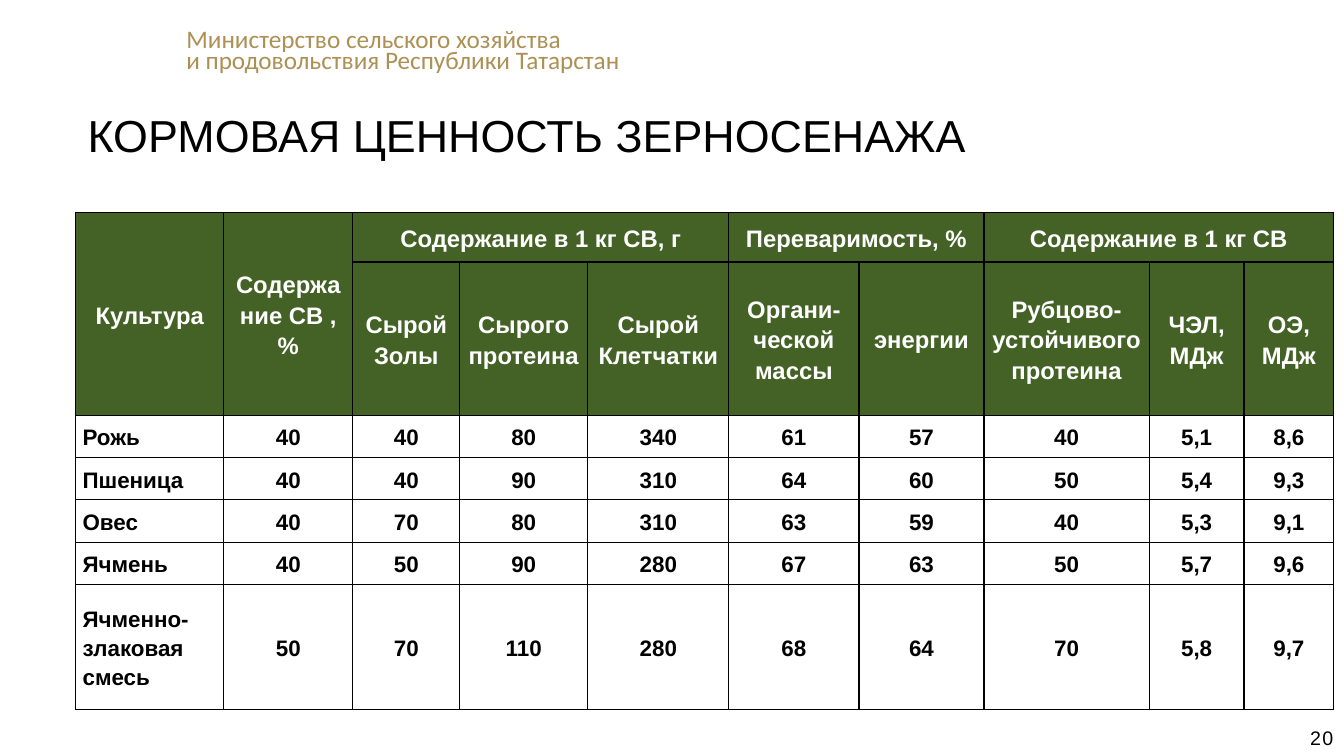
import dataclasses

import pptx
import pptx.dml.color
import pptx.enum.text
import pptx.oxml
import pptx.oxml.ns
import pptx.util

EMU_PER_PX = 9144
ALIGN = pptx.enum.text.PP_ALIGN
AUTO_SIZE = pptx.enum.text.MSO_AUTO_SIZE


@dataclasses.dataclass(frozen=True)
class Theme:
    gold: str = "AC9054"
    green: str = "446226"
    white: str = "FFFFFF"
    black: str = "000000"
    heading_font: str = "Calibri"
    font: str = "Arial"
    ministry_size: int = 18
    title_size: int = 32
    header_size: int = 17
    body_size: int = 16
    number_size: int = 14
    border_pt: int = 1


THEME = Theme()

COLUMN_WIDTHS = [147, 128, 106, 127, 140, 129, 124, 164, 94, 89]
ROW_HEIGHTS = [49, 152, 42, 42, 42, 42, 124]
# row, column, rows spanned, columns spanned, text
GROUP_HEADERS = [
    (0, 0, 2, 1, "Культура"),
    (0, 1, 2, 1, "Содержание СВ , %"),
    (0, 2, 1, 3, "Содержание в 1 кг СВ, г"),
    (0, 5, 1, 2, "Переваримость, %"),
    (0, 7, 1, 3, "Содержание в 1 кг СВ"),
]
SUBHEADERS = [
    "Сырой Золы", "Сырого протеина", "Сырой Клетчатки", "Органи-ческой массы",
    "энергии", "Рубцово- устойчивого протеина", "ЧЭЛ, МДж", "ОЭ, МДж",
]
CROPS = [
    ("Рожь", "40", "40", "80", "340", "61", "57", "40", "5,1", "8,6"),
    ("Пшеница", "40", "40", "90", "310", "64", "60", "50", "5,4", "9,3"),
    ("Овес", "40", "70", "80", "310", "63", "59", "40", "5,3", "9,1"),
    ("Ячмень", "40", "50", "90", "280", "67", "63", "50", "5,7", "9,6"),
    ("Ячменно-злаковая смесь", "50", "70", "110", "280", "68", "64", "70", "5,8", "9,7"),
]


def px(length):
    return pptx.util.Emu(length * EMU_PER_PX)


def rgb(color):
    return pptx.dml.color.RGBColor.from_string(color)


def add_span(para, text, size, color, font=THEME.font, bold=False):
    span = para.add_run()
    span.text = text
    span.font.name = font
    span.font.size = pptx.util.Pt(size)
    span.font.bold = bold
    span.font.color.rgb = rgb(color)
    return span


def add_box(page, left, top, width, height, wrap, grow=True):
    """Add an empty text box and return its text frame."""
    box = page.shapes.add_textbox(px(left), px(top), px(width), px(height))
    frame = box.text_frame
    frame.word_wrap = wrap
    frame.auto_size = AUTO_SIZE.SHAPE_TO_FIT_TEXT if grow else AUTO_SIZE.NONE
    return frame


def add_ministry(page):
    frame = add_box(page, 175, 26, 455, 54, wrap=False)
    lines = ["Министерство сельского хозяйства", "и продовольствия Республики Татарстан"]
    for index, line in enumerate(lines):
        para = frame.add_paragraph() if index else frame.paragraphs[0]
        para.line_spacing = 0.7
        add_span(para, line, THEME.ministry_size, THEME.gold, THEME.heading_font)


def add_title(page):
    para = add_box(page, 58, 102, 1275, 64, wrap=True).paragraphs[0]
    properties = para._p.get_or_add_pPr()
    properties.set("marL", str(px(19)))
    properties.set("indent", "0")
    add_span(para, "КОРМОВАЯ ЦЕННОСТЬ ЗЕРНОСЕНАЖА", THEME.title_size, THEME.black)


def add_page_number(page):
    frame = add_box(page, 1298, 720, 26, 23, wrap=False, grow=False)
    frame.margin_left = frame.margin_right = frame.margin_top = frame.margin_bottom = 0
    para = frame.paragraphs[0]
    para.alignment = ALIGN.CENTER
    span = add_span(para, "20", THEME.number_size, THEME.black)
    span._r.get_or_add_rPr().set("spc", "100")


def outline_cell(cell):
    properties = cell._tc.get_or_add_tcPr()
    width = pptx.util.Pt(THEME.border_pt)
    for side in ("lnL", "lnR", "lnT", "lnB"):
        properties.append(pptx.oxml.parse_xml(
            f'<a:{side} {pptx.oxml.ns.nsdecls("a")} w="{width}"><a:solidFill>'
            f'<a:srgbClr val="{THEME.black}"/></a:solidFill></a:{side}>'))


def fill_cell(cell, text, size, color, alignment):
    cell.vertical_anchor = pptx.enum.text.MSO_ANCHOR.MIDDLE
    cell.margin_left = cell.margin_right = px(7)
    cell.margin_top = cell.margin_bottom = 0
    para = cell.text_frame.paragraphs[0]
    para.alignment = alignment
    para.line_spacing = 1.15
    add_span(para, text, size, color, bold=True)


def add_feed_table(page):
    table = page.shapes.add_table(
        len(ROW_HEIGHTS), len(COLUMN_WIDTHS), px(75), px(211),
        px(sum(COLUMN_WIDTHS)), px(sum(ROW_HEIGHTS))).table
    table.first_row = table.horz_banding = False
    for column, width in zip(table.columns, COLUMN_WIDTHS):
        column.width = px(width)
    for row_index, (row, height) in enumerate(zip(table.rows, ROW_HEIGHTS)):
        row.height = px(height)
        for cell in row.cells:
            outline_cell(cell)
            if row_index < 2:
                cell.fill.solid()
                cell.fill.fore_color.rgb = rgb(THEME.green)
            else:
                cell.fill.background()

    subheaders = [(1, column, 1, 1, text) for column, text in enumerate(SUBHEADERS, 2)]
    for row, column, row_span, column_span, text in GROUP_HEADERS + subheaders:
        cell = table.cell(row, column)
        if row_span * column_span > 1:
            cell.merge(table.cell(row + row_span - 1, column + column_span - 1))
        fill_cell(cell, text, THEME.header_size, THEME.white, ALIGN.CENTER)

    for row, crop in enumerate(CROPS, 2):
        for column, text in enumerate(crop):
            alignment = ALIGN.CENTER if column else ALIGN.JUSTIFY
            fill_cell(table.cell(row, column), text, THEME.body_size, THEME.black, alignment)


def main():
    deck = pptx.Presentation()
    deck.slide_width, deck.slide_height = px(1333), px(750)
    page = deck.slides.add_slide(deck.slide_layouts[6])
    add_ministry(page)
    add_feed_table(page)
    add_page_number(page)
    add_title(page)
    deck.save("out.pptx")


if __name__ == "__main__":
    main()
